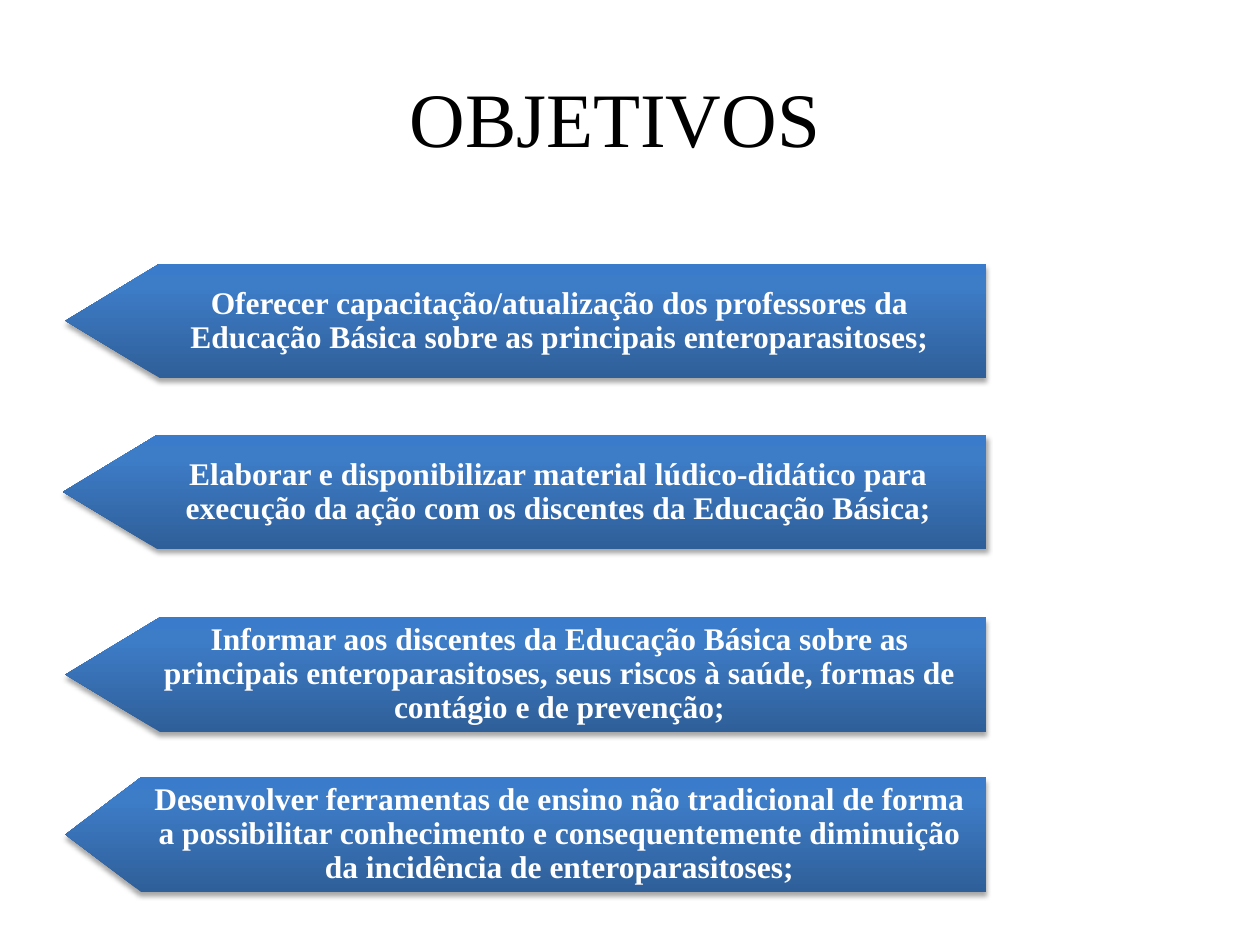
from copy import deepcopy

from lxml import etree
from pptx import Presentation
from pptx.dml.color import RGBColor
from pptx.enum.text import MSO_ANCHOR, PP_ALIGN
from pptx.oxml.ns import qn
from pptx.util import Pt

MIDDLE = MSO_ANCHOR.MIDDLE
CENTER = PP_ALIGN.CENTER
FONT = "Times New Roman"
COLORS = {
    "title": "000000",
    "label": "FFFFFF",
    "shade": "2F5F99",
    "body": "3D7CC7",
    "top": "3A7CCB",
    "shadow": "000000",
}
GRADIENT = [(0, "shade"), (0.8, "body"), (1, "top")]
ARROW_RIGHT = 563.8
ARROW_HEIGHT = 65.4
OBJECTIVES = [
    (37.4, 150.6, 54,
     "Oferecer capacitação/atualização dos professores da Educação Básica "
     "sobre as principais enteroparasitoses;"),
    (36, 248.4, 54,
     "Elaborar e disponibilizar material lúdico-didático para execução da "
     "ação com os discentes da Educação Básica;"),
    (37.4, 352.8, 54,
     "Informar aos discentes da Educação Básica sobre as principais "
     "enteroparasitoses, seus riscos à saúde, formas de contágio e de prevenção;"),
    (37.4, 444.2, 43.2,
     "Desenvolver ferramentas de ensino não tradicional de forma a possibilitar "
     "conhecimento e consequentemente diminuição da incidência de "
     "enteroparasitoses;"),
]


def write_text(shape, text, size, color, bold, insets):
    """Put one centred run in a shape and return its paragraph."""
    frame = shape.text_frame
    frame.word_wrap = True
    frame.vertical_anchor = MIDDLE
    frame.margin_left, frame.margin_top, frame.margin_right, frame.margin_bottom = (
        Pt(inset) for inset in insets)
    paragraph = frame.paragraphs[0]
    paragraph.alignment = CENTER
    run = paragraph.add_run()
    run.text = text
    run.font.name = FONT
    run.font.size = Pt(size)
    run.font.bold = bold
    run.font.color.rgb = RGBColor.from_string(COLORS[color])
    return paragraph


def fill_gradient(shape):
    """Fill a shape with the blue gradient, dark at the bottom."""
    shape.fill.gradient()
    shape.fill.gradient_angle = 90
    stop_list = shape._element.spPr.find(".//" + qn("a:gsLst"))
    stop_list.append(deepcopy(stop_list[0]))
    for stop, (position, color) in zip(shape.fill.gradient_stops, GRADIENT):
        stop.position = position
        stop.color.rgb = RGBColor.from_string(COLORS[color])


def cast_shadow(shape):
    """Give a shape a soft shadow straight below it."""
    shape.shadow.inherit = False
    effects = shape._element.spPr.find(qn("a:effectLst"))
    shadow = etree.SubElement(
        effects, qn("a:outerShdw"), blurRad=str(Pt(3.1)), dist=str(Pt(1.8)),
        dir="5400000", rotWithShape="0")
    color = etree.SubElement(shadow, qn("a:srgbClr"), val=COLORS["shadow"])
    etree.SubElement(color, qn("a:alpha"), val="35000")


def add_title(slide, text):
    """Add the slide heading."""
    heading = slide.shapes.add_textbox(Pt(36), Pt(21.6), Pt(648), Pt(90))
    write_text(heading, text, 44, "title", False, (7.2, 3.6, 7.2, 3.6))


def add_objective(slide, tip, top, head, text):
    """Add one objective in an arrow that points left."""
    shoulder, bottom = tip + head, top + ARROW_HEIGHT
    outline = [(shoulder, bottom), (tip, top + ARROW_HEIGHT / 2),
               (shoulder, top), (ARROW_RIGHT, top)]
    builder = slide.shapes.build_freeform(Pt(ARROW_RIGHT), Pt(bottom))
    builder.add_line_segments([(Pt(x), Pt(y)) for x, y in outline], close=True)
    arrow = builder.convert_to_shape()
    fill_gradient(arrow)
    arrow.line.fill.background()
    cast_shadow(arrow)
    paragraph = write_text(arrow, text, 18, "label", True, (45.4, 3.6, 7.2, 3.6))
    paragraph.line_spacing = 0.9


def main():
    """Build and save the slide."""
    deck = Presentation()
    deck.slide_width, deck.slide_height = Pt(720), Pt(540)
    slide = deck.slides.add_slide(deck.slide_layouts[6])
    add_title(slide, "OBJETIVOS\t")
    for objective in OBJECTIVES:
        add_objective(slide, *objective)
    deck.save("out.pptx")


if __name__ == "__main__":
    main()
